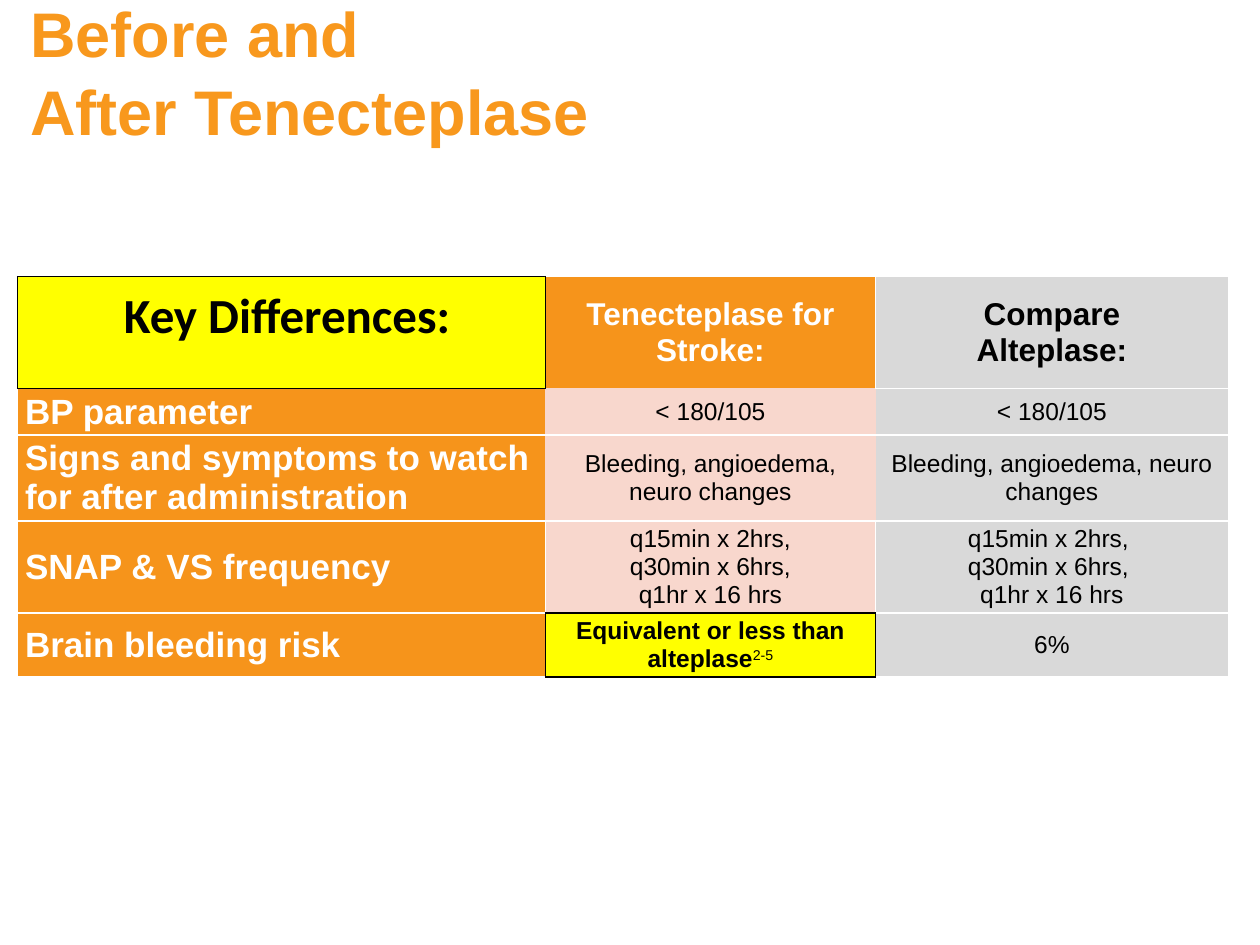
from dataclasses import dataclass

from lxml.etree import SubElement
from pptx import Presentation
from pptx.dml.color import RGBColor
from pptx.enum.text import MSO_ANCHOR as Anchor, PP_ALIGN as Align
from pptx.oxml.ns import qn
from pptx.util import Pt

AMBER = RGBColor(0xF8, 0x98, 0x1D)
ORANGE = RGBColor(0xF6, 0x94, 0x1B)
PINK = RGBColor(0xF8, 0xD7, 0xCD)
GREY = RGBColor(0xD9, 0xD9, 0xD9)
YELLOW = RGBColor(0xFF, 0xFF, 0x00)
WHITE = RGBColor(0xFF, 0xFF, 0xFF)
BLACK = RGBColor(0x00, 0x00, 0x00)

COLUMN_WIDTHS = (301.7, 188.6, 201.6)
ROW_HEIGHTS = (64, 23, 41, 52.6, 36.7)
NEIGHBOURS = {"L": (0, -1), "R": (0, 1), "T": (-1, 0), "B": (1, 0)}


@dataclass(frozen=True)
class Entry:
    lines: tuple[str, ...]
    fill: RGBColor
    size: float = 14
    color: RGBColor = BLACK
    bold: bool = False
    align: Align = Align.CENTER
    edges: str = "LTRB"
    note: str = ""
    bottom: float = 2.2

    @property
    def highlighted(self) -> bool:
        return self.fill == YELLOW


def label(text: str, edges: str = "LTRB") -> Entry:
    return Entry((text,), ORANGE, 20, WHITE, True, Align.LEFT, edges)


def add_text(para, text: str, *, size: float, color: RGBColor, bold: bool = False,
             font: str = "Arial", baseline: int = 0) -> None:
    span = para.add_run()
    span.text = text
    span.font.name = font
    span.font.size = Pt(size)
    span.font.bold = bold
    span.font.color.rgb = color
    if baseline:
        span._r.get_or_add_rPr().set("baseline", str(baseline * 1000))


def add_border(cell, side: str, color: RGBColor | None) -> None:
    line = SubElement(cell._tc.get_or_add_tcPr(), qn(f"a:ln{side}"), w=str(Pt(1)))
    if color is None:
        SubElement(line, qn("a:noFill"))
    else:
        solid = SubElement(line, qn("a:solidFill"))
        SubElement(solid, qn("a:srgbClr"), val=str(color))


def border_color(entries: dict, row: int, column: int, side: str) -> RGBColor | None:
    down, across = NEIGHBOURS[side]
    entry = entries[row, column]
    neighbour = entries.get((row + down, column + across))
    if entry.highlighted or (neighbour and neighbour.highlighted):
        return BLACK
    return WHITE if side in entry.edges else None


def fill_cell(cell, entry: Entry) -> None:
    cell.fill.solid()
    cell.fill.fore_color.rgb = entry.fill
    cell.vertical_anchor = Anchor.MIDDLE
    cell.margin_left = cell.margin_right = Pt(4.3)
    cell.margin_top, cell.margin_bottom = Pt(2.2), Pt(entry.bottom)
    frame = cell.text_frame
    for index, text in enumerate(entry.lines):
        para = frame.add_paragraph() if index else frame.paragraphs[0]
        para.alignment = entry.align
        font = "Calibri" if entry.size == 28 else "Arial"
        add_text(para, text, size=entry.size, color=entry.color, bold=entry.bold, font=font)
        if entry.note:
            add_text(para, entry.note, size=entry.size, color=entry.color, baseline=30)


ROWS = (
    (Entry((" Key Differences:",), YELLOW, 28, bold=True, bottom=20),
     Entry(("Tenecteplase for Stroke:",), ORANGE, 18, WHITE, True, edges="LTR"),
     Entry(("Compare", "Alteplase:"), GREY, 18, bold=True)),
    (label("BP parameter", "B"),
     Entry(("< 180/105",), PINK, edges="B"),
     Entry(("< 180/105",), GREY, edges="TB")),
    (label("Signs and symptoms to watch for after administration", "TB"),
     Entry(("Bleeding, angioedema, neuro changes",), PINK, edges="TB"),
     Entry(("Bleeding, angioedema, neuro changes",), GREY, edges="TB")),
    (label("SNAP & VS frequency"),
     Entry(("q15min x 2hrs,", "q30min x 6hrs,", "q1hr x 16 hrs"), PINK),
     Entry(("q15min x 2hrs, ", "q30min x 6hrs, ", "q1hr x 16 hrs"), GREY)),
    (label("Brain bleeding risk"),
     Entry(("Equivalent or less than alteplase",), YELLOW, bold=True, note="2-5"),
     Entry(("6%",), GREY)),
)


def add_title(page) -> None:
    box = page.shapes.title
    box.left, box.top, box.width, box.height = Pt(10), Pt(-4.3), Pt(595.4), Pt(90)
    frame = box.text_frame
    frame.word_wrap = True
    frame.vertical_anchor = Anchor.MIDDLE
    for index, text in enumerate(("Before and", "After Tenecteplase")):
        para = frame.add_paragraph() if index else frame.paragraphs[0]
        para.alignment = Align.LEFT
        para.space_before = Pt(index)
        add_text(para, text, size=36, color=AMBER, bold=True)


def add_comparison(page) -> None:
    table = page.shapes.add_table(
        len(ROW_HEIGHTS), len(COLUMN_WIDTHS), Pt(10), Pt(158),
        Pt(sum(COLUMN_WIDTHS)), Pt(sum(ROW_HEIGHTS))).table
    table.first_row = table.horz_banding = False
    for column, width in zip(table.columns, COLUMN_WIDTHS):
        column.width = Pt(width)
    for row, height in zip(table.rows, ROW_HEIGHTS):
        row.height = Pt(height)
    entries = {(row, column): entry
               for row, line in enumerate(ROWS) for column, entry in enumerate(line)}
    for (row, column), entry in entries.items():
        cell = table.cell(row, column)
        for side in NEIGHBOURS:
            add_border(cell, side, border_color(entries, row, column, side))
        fill_cell(cell, entry)


def main() -> None:
    deck = Presentation()
    deck.slide_width, deck.slide_height = Pt(720), Pt(540)
    page = deck.slides.add_slide(deck.slide_layouts[5])
    add_title(page)
    add_comparison(page)
    deck.save("out.pptx")


if __name__ == "__main__":
    main()
